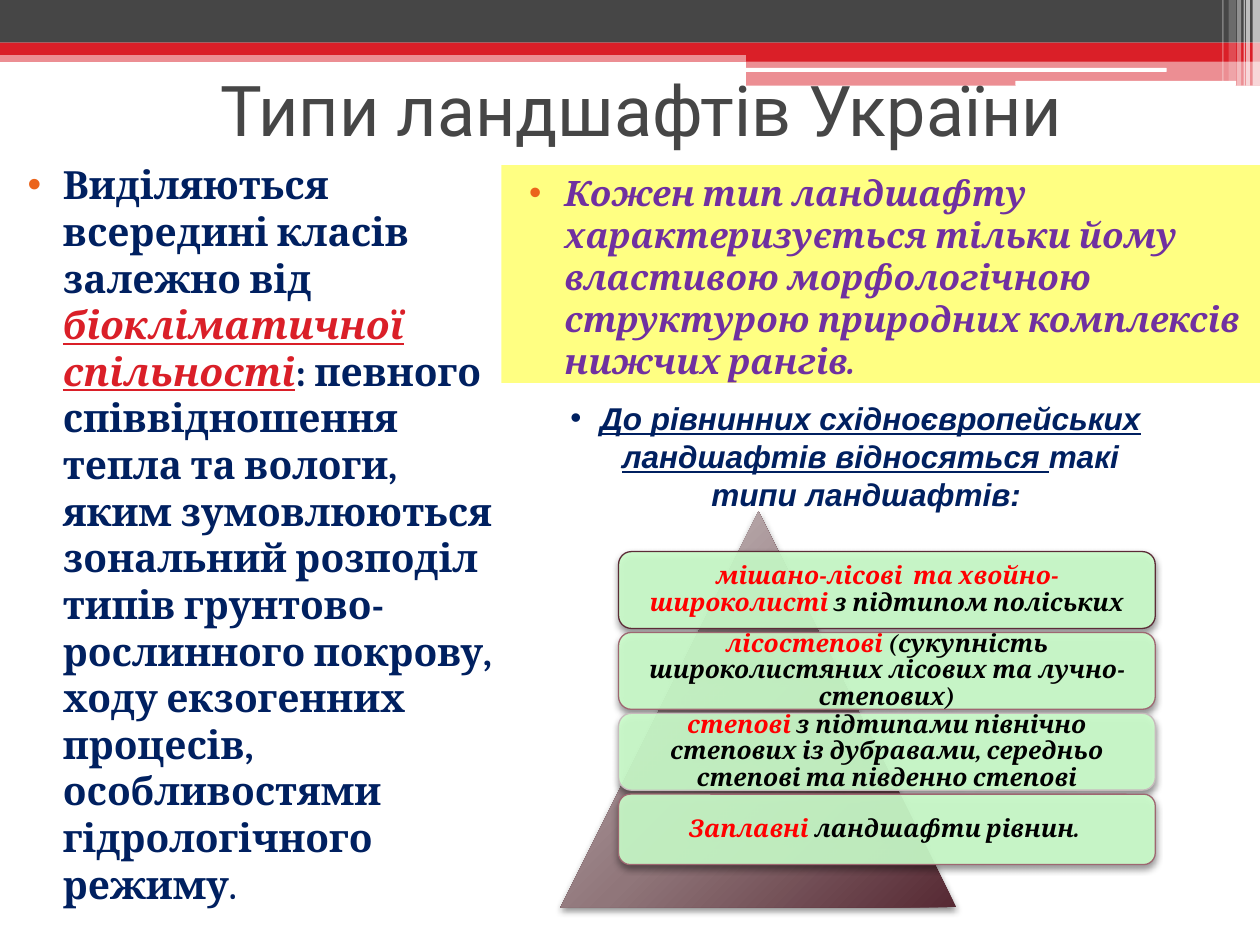
import pptx
import pptx.util
import pptx.dml.color
import pptx.enum.shapes
import pptx.enum.text
import pptx.oxml
import pptx.oxml.ns

Cm = pptx.util.Cm
Pt = pptx.util.Pt
SHAPE = pptx.enum.shapes.MSO_SHAPE
ALIGN = pptx.enum.text.PP_ALIGN
ANCHOR = pptx.enum.text.MSO_ANCHOR
NAMESPACE = pptx.oxml.ns.nsdecls("a")
COLORS = {
    "red": "DA1F28", "gray": "464646", "white": "FFFFFF", "navy": "002060",
    "purple": "7030A0", "yellow": "FFFF00", "mint": "CCFFCC", "orange": "EB641B",
    "bright_red": "FF0000", "black": "000000", "wine": "5C2C37", "rose": "9E6771",
    "pale": "C7BBBD", "cone_light": "D0C7C8", "cone_mid": "90767A", "cone_dark": "562933",
}


def rgb(name):
    """Return the named colour."""
    return pptx.dml.color.RGBColor.from_string(COLORS[name])


def add_filled(page, kind, box, color, opacity=100):
    """Add a borderless, shadowless shape with a plain fill; box is in cm."""
    shape = page.shapes.add_shape(kind, *map(Cm, box))
    shape.shadow.inherit = False
    shape.line.fill.background()
    shape.fill.solid()
    shape.fill.fore_color.rgb = rgb(color)
    if opacity < 100:
        tint = shape.fill._xPr.find(".//" + pptx.oxml.ns.qn("a:srgbClr"))
        tint.append(pptx.oxml.parse_xml(f'<a:alpha {NAMESPACE} val="{opacity * 1000}"/>'))
    return shape


def add_soft_shadow(shape):
    """Put a blurred shadow just below a shape."""
    effects = shape._element.spPr.find(pptx.oxml.ns.qn("a:effectLst"))
    effects.append(pptx.oxml.parse_xml(
        f'<a:outerShdw {NAMESPACE} blurRad="{Pt(4)}" dist="{Pt(2)}" dir="5400000" rotWithShape="0">'
        f'<a:srgbClr val="{COLORS["black"]}"><a:alpha val="45000"/></a:srgbClr></a:outerShdw>'))


def add_span(para, text, size, color, font="Cambria", bold=True, italic=False, underline=False):
    """Add one formatted run."""
    span = para.add_run()
    span.text = text
    span.font.size = Pt(size)
    span.font.name = font
    span.font.color.rgb = rgb(color)
    span.font.bold = bold
    span.font.italic = italic
    span.font.underline = underline


def add_bullet(para, color, margin, indent):
    """Give a paragraph a round bullet and a hanging indent in cm."""
    properties = para._p.get_or_add_pPr()
    properties.set("marL", str(Cm(margin)))
    properties.set("indent", str(Cm(indent)))
    for markup in (f'<a:buClr {NAMESPACE}><a:srgbClr val="{COLORS[color]}"/></a:buClr>',
                   f'<a:buFont {NAMESPACE} typeface="Arial"/>',
                   f'<a:buChar {NAMESPACE} char="•"/>'):
        properties.append(pptx.oxml.parse_xml(markup))


def add_header(page, box):
    """Draw the coloured bands, white bars and corner stripes."""
    left, top, width, height = box
    right = left + width
    half = 10.36
    bands = [
        (0, 1.02, width, 0.23, "red", 50), (0, 0, width, 0.86, "gray", 100),
        (0, 0.86, width, 0.25, "red", 100), (width - half, 0.99, half, 0.25, "red", 100),
        (width - half, 1.22, half, 0.51, "red", 50),
    ]
    for x, y, w, h, color, opacity in bands:
        add_filled(page, SHAPE.RECTANGLE, (left + x, top + y, w, h), color, opacity)
    for x, y, w, h in [(15.01, 1.37, 8.51, 0.08), (20.47, 1.63, 4.45, 0.1)]:
        add_filled(page, SHAPE.ROUNDED_RECTANGLE, (left + x, top + y, w, h), "white")
    stripes = [(0.15, 0.15, height, 65), (0.28, 0.08, height, 65), (0.33, 0.03, height, 60),
               (0.46, 0.08, height, 40), (0.63, 0.15, 1.63, 20), (0.76, 0.03, 1.63, 30)]
    for offset, w, h, opacity in stripes:
        add_filled(page, SHAPE.RECTANGLE, (right - offset, top, w, h), "white", opacity)


def add_title(page, box):
    """Place and format the title placeholder."""
    title = page.shapes.title
    title.left, title.top, title.width, title.height = map(Cm, box)
    frame = title.text_frame
    frame.vertical_anchor = ANCHOR.MIDDLE
    para = frame.paragraphs[0]
    para.alignment = ALIGN.CENTER
    add_span(para, "Типи ландшафтів України", 40, "gray", "Roboto", bold=False)


def add_definition(page, box):
    """Write the definition in the left column."""
    frame = page.shapes.add_textbox(*map(Cm, box)).text_frame
    frame.word_wrap = True
    para = frame.paragraphs[0]
    para.space_before = Pt(3)
    add_bullet(para, "orange", 1.02, -0.71)
    add_span(para, "Виділяються всередині класів залежно від ", 22.2, "navy")
    add_span(para, "біокліматичної спільності", 22.2, "red", italic=True, underline=True)
    add_span(para, ": певного співвідношення тепла та вологи, яким зумовлюються зональний "
             "розподіл типів грунтово-рослинного покрову, ходу екзогенних процесів, "
             "особливостями гідрологічного режиму", 22.2, "navy")
    add_span(para, ".", 18.5, "navy")


def add_highlight(page, box):
    """Write the statement on the yellow panel."""
    panel = add_filled(page, SHAPE.RECTANGLE, box, "yellow", 49)
    frame = panel.text_frame
    frame.word_wrap = True
    frame.vertical_anchor = ANCHOR.TOP
    para = frame.paragraphs[0]
    para.alignment = ALIGN.LEFT
    para.space_before = Pt(3)
    add_bullet(para, "orange", 1.02, -0.71)
    add_span(para, "Кожен тип ландшафту характеризується тільки йому властивою морфологічною "
             "структурою природних комплексів нижчих рангів.", 20, "purple", italic=True)


def add_lead_in(page, box):
    """Write the line that introduces the pyramid."""
    frame = page.shapes.add_textbox(*map(Cm, box)).text_frame
    frame.word_wrap = True
    para = frame.paragraphs[0]
    para.alignment = ALIGN.CENTER
    add_bullet(para, "navy", 0.6, -0.6)
    add_span(para, "До рівнинних східноєвропейських ландшафтів відносяться ", 18, "navy",
             "Arial", italic=True, underline=True)
    add_span(para, "такі типи ландшафтів: ", 18, "navy", "Arial", italic=True)


def add_card(page, box, border, spans):
    """Add one rounded card with centred text."""
    card = add_filled(page, SHAPE.ROUNDED_RECTANGLE, box, "mint", 90)
    card.line.color.rgb = rgb(border)
    card.line.width = Pt(0.75)
    add_soft_shadow(card)
    frame = card.text_frame
    frame.word_wrap = True
    frame.vertical_anchor = ANCHOR.MIDDLE
    frame.margin_left = frame.margin_right = frame.margin_top = frame.margin_bottom = Cm(0.15)
    para = frame.paragraphs[0]
    para.alignment = ALIGN.CENTER
    para.line_spacing = 0.9
    for text, color in spans:
        add_span(para, text, 14, color, italic=True)


def add_pyramid(page, box):
    """Draw the triangle and the stack of landscape cards over it."""
    left, top, width, height = box
    triangle = add_filled(page, SHAPE.ISOSCELES_TRIANGLE, (left, top, height, height), "cone_mid")
    add_soft_shadow(triangle)
    properties = triangle._element.spPr
    stops = "".join(f'<a:gs pos="{position}000"><a:srgbClr val="{COLORS[name]}"/></a:gs>'
                    for position, name in [(0, "cone_light"), (55, "cone_mid"), (100, "cone_dark")])
    properties.replace(properties.find(pptx.oxml.ns.qn("a:solidFill")), pptx.oxml.parse_xml(
        f'<a:gradFill {NAMESPACE} rotWithShape="1"><a:gsLst>{stops}</a:gsLst><a:path path="circle">'
        '<a:fillToRect l="-40000" t="-90000" r="140000" b="190000"/></a:path></a:gradFill>'))
    cards = [
        (1.55, "wine", [("мішано-лісові  та хвойно-широколисті ", "bright_red"),
                        ("з підтипом поліських", "black")]),
        (1.55, "rose", [("лісостепові ", "bright_red"),
                        ("(сукупність широколистяних лісових та лучно-степових)", "black")]),
        (1.55, "pale", [("степові", "bright_red"),
                        (" з підтипами північно степових із дубравами, середньо степові "
                         "та південно степові", "black")]),
        (1.42, "rose", [("Заплавні ", "bright_red"), ("ландшафти рівнин. ", "black")]),
    ]
    card_width = 10.82
    for index, (card_height, border, spans) in enumerate(cards):
        card_box = (left + width - card_width, top + 0.81 + index * 1.63, card_width, card_height)
        add_card(page, card_box, border, spans)


def main():
    """Build and save the slide."""
    deck = pptx.Presentation()
    deck.slide_width, deck.slide_height = Cm(25.4), Cm(19.05)
    page = deck.slides.add_slide(deck.slide_layouts[5])
    add_header(page, (0, 0, 25.4, 1.73))
    add_title(page, (1.5, 0.71, 22.86, 2.97))
    add_definition(page, (0, 3.12, 10.31, 15.7))
    add_highlight(page, (10.11, 3.33, 15.29, 4.39))
    add_pyramid(page, (11.3, 10.31, 11.99, 7.98))
    add_lead_in(page, (10.9, 7.92, 12.7, 2.57))
    deck.save("out.pptx")


if __name__ == "__main__":
    main()
